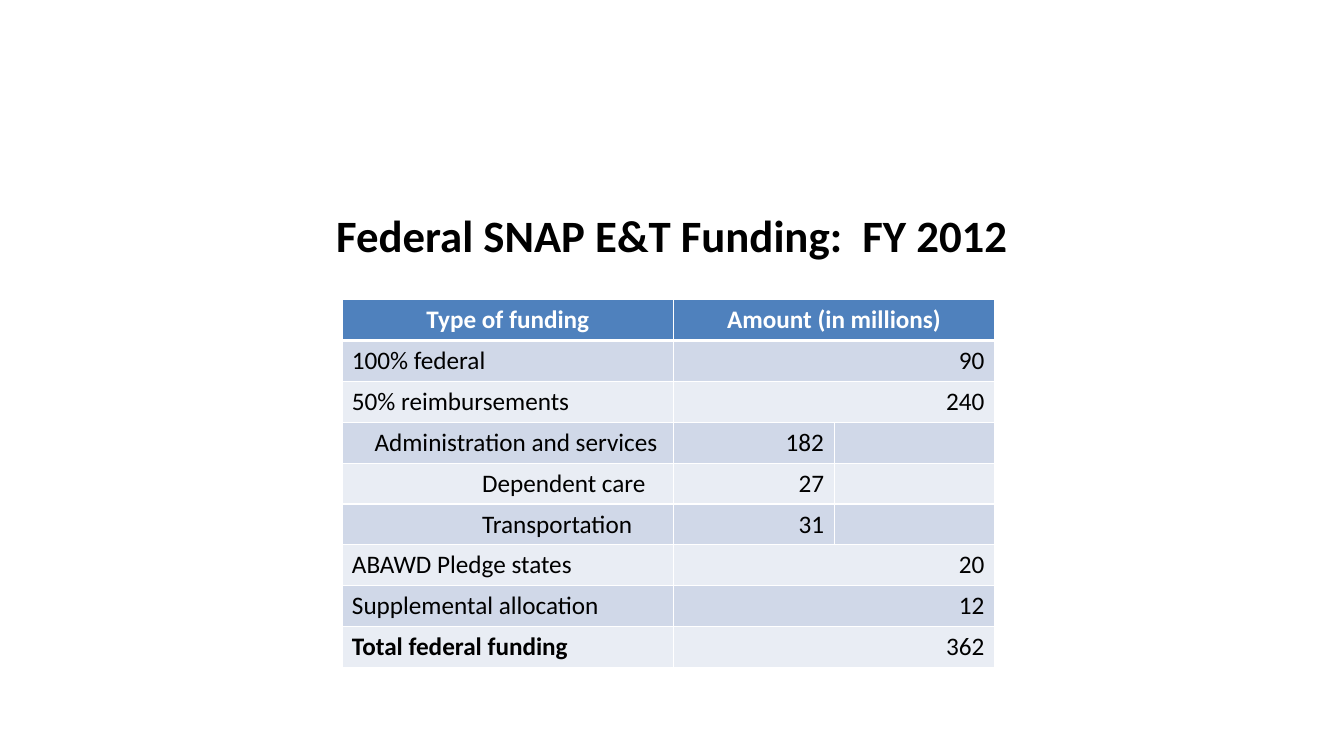
from dataclasses import dataclass

from lxml.etree import SubElement
from pptx import Presentation
from pptx.dml.color import RGBColor
from pptx.enum.text import MSO_ANCHOR, MSO_AUTO_SIZE, PP_ALIGN
from pptx.oxml.ns import qn
from pptx.table import _Cell
from pptx.text.text import TextFrame
from pptx.util import Cm, Pt

BLACK = RGBColor(0x00, 0x00, 0x00)
WHITE = RGBColor(0xFF, 0xFF, 0xFF)
HEADER_BLUE = RGBColor(0x4F, 0x81, 0xBD)
BAND_DARK = RGBColor(0xD0, 0xD8, 0xE8)
BAND_LIGHT = RGBColor(0xE9, 0xED, 0xF4)

ROW_HEIGHT = 1.03
COLUMN_WIDTHS = (8.36, 4.04, 4.04)
CELL_MARGIN = 0.25


@dataclass(frozen=True)
class FundingRow:
    label: str
    amount: str
    indent: float = 0  # cm; indented rows are parts of the row above
    bold: bool = False


FUNDING = [
    FundingRow("100% federal", "90"),
    FundingRow("50% reimbursements", "240"),
    FundingRow("Administration and services", "182", indent=0.57),
    FundingRow("Dependent care", "27", indent=3.28),
    FundingRow("Transportation", "31", indent=3.28),
    FundingRow("ABAWD Pledge states", "20"),
    FundingRow("Supplemental allocation", "12"),
    FundingRow("Total federal funding", "362", bold=True),
]


def write(frame: TextFrame, text: str, *, size: float = 18, bold: bool = False,
          color: RGBColor = BLACK, align: PP_ALIGN = PP_ALIGN.LEFT) -> None:
    """Put one formatted paragraph into a text frame."""
    paragraph = frame.paragraphs[0]
    paragraph.alignment = align
    run = paragraph.add_run()
    run.text = text
    run.font.name = "Calibri"
    run.font.size = Pt(size)
    run.font.bold = bold
    run.font.color.rgb = color


def style_cell(cell: _Cell, fill: RGBColor, top: float = 1, bottom: float = 1) -> None:
    """Give a cell white borders (widths in points) and a solid fill."""
    properties = cell._tc.get_or_add_tcPr()
    for side, width in (("L", 1), ("R", 1), ("T", top), ("B", bottom)):
        line = SubElement(properties, qn(f"a:ln{side}"), w=str(Pt(width)))
        solid = SubElement(line, qn("a:solidFill"))
        SubElement(solid, qn("a:srgbClr"), val=str(WHITE))
    cell.fill.solid()
    cell.fill.fore_color.rgb = fill


def add_heading(slide) -> None:
    heading = slide.shapes.title
    heading.left, heading.top = Cm(1.7), Cm(5.11)
    heading.width, heading.height = Cm(30.48), Cm(12.57)
    frame = heading.text_frame
    frame.auto_size = MSO_AUTO_SIZE.NONE
    frame.vertical_anchor = MSO_ANCHOR.TOP
    write(frame, "Federal SNAP E&T Funding:  FY 2012",
          size=32, bold=True, align=PP_ALIGN.CENTER)


def add_funding_table(slide) -> None:
    row_count = len(FUNDING) + 1
    table = slide.shapes.add_table(
        row_count, len(COLUMN_WIDTHS), Cm(8.62), Cm(7.55),
        Cm(sum(COLUMN_WIDTHS)), Cm(row_count * ROW_HEIGHT)).table
    for column, width in zip(table.columns, COLUMN_WIDTHS):
        column.width = Cm(width)
    for row in table.rows:
        row.height = Cm(ROW_HEIGHT)

    # Header row
    for cell in table.rows[0].cells:
        style_cell(cell, HEADER_BLUE, bottom=3)
    table.cell(0, 1).merge(table.cell(0, 2))
    for column, caption in enumerate(("Type of funding", "Amount (in millions)")):
        write(table.cell(0, column).text_frame, caption,
              bold=True, color=WHITE, align=PP_ALIGN.CENTER)

    # Funding rows: totals span both amount columns
    for index, funding in enumerate(FUNDING, start=1):
        band = BAND_DARK if index % 2 else BAND_LIGHT
        for cell in table.rows[index].cells:
            style_cell(cell, band, top=3 if index == 1 else 1)
        label, amount = table.cell(index, 0), table.cell(index, 1)
        if not funding.indent:
            amount.merge(table.cell(index, 2))
        label.margin_left = Cm(CELL_MARGIN + funding.indent)
        write(label.text_frame, funding.label, bold=funding.bold)
        write(amount.text_frame, funding.amount, align=PP_ALIGN.RIGHT)


def main() -> None:
    presentation = Presentation()
    presentation.slide_width, presentation.slide_height = Cm(33.87), Cm(19.05)
    slide = presentation.slides.add_slide(presentation.slide_layouts[5])
    add_heading(slide)
    add_funding_table(slide)
    presentation.save("out.pptx")


if __name__ == "__main__":
    main()
